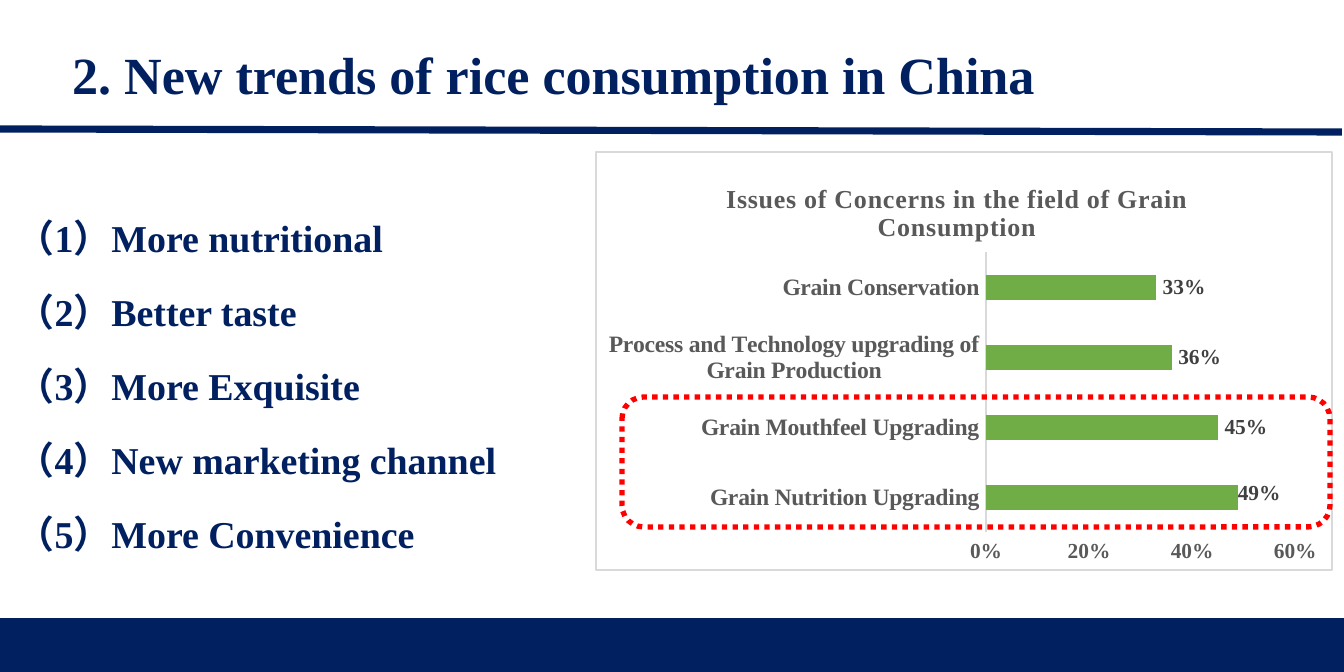
from dataclasses import dataclass

from lxml import etree
from pptx import Presentation
from pptx.chart.data import CategoryChartData
from pptx.dml.color import RGBColor
from pptx.enum.chart import XL_CHART_TYPE, XL_LABEL_POSITION, XL_TICK_MARK
from pptx.enum.dml import MSO_LINE
from pptx.enum.shapes import MSO_CONNECTOR, MSO_SHAPE
from pptx.enum.text import MSO_ANCHOR, PP_ALIGN
from pptx.oxml import parse_xml
from pptx.oxml.ns import nsdecls, qn
from pptx.util import Pt

BAR_CLUSTERED = XL_CHART_TYPE.BAR_CLUSTERED
OUTSIDE_END = XL_LABEL_POSITION.OUTSIDE_END
NO_TICK = XL_TICK_MARK.NONE
STRAIGHT = MSO_CONNECTOR.STRAIGHT
DOTTED = MSO_LINE.ROUND_DOT
RECTANGLE, ROUNDED = MSO_SHAPE.RECTANGLE, MSO_SHAPE.ROUNDED_RECTANGLE
MIDDLE, LEFT = MSO_ANCHOR.MIDDLE, PP_ALIGN.LEFT

EMU_PER_PX = 5354
PAGE_WIDTH, PAGE_HEIGHT = 1344, 672
TITLE_ONLY = 5


@dataclass(frozen=True)
class Theme:
    face: str = "Times New Roman"
    navy: str = "002060"
    white: str = "FFFFFF"
    green: str = "70AD47"
    red: str = "FF0000"
    gray: str = "595959"
    dark: str = "404040"
    pale: str = "D9D9D9"
    title: int = 22
    body: int = 16
    chart_title: int = 11
    category: int = 10
    value: int = 9


THEME = Theme()

TRENDS = ["More nutritional", "Better taste", "More Exquisite",
          "New marketing channel", "More Convenience"]
CHART_TITLE = ["Issues of Concerns in the field of Grain", "Consumption"]
CONCERNS = {
    "Grain Nutrition Upgrading": 0.49,
    "Grain Mouthfeel Upgrading": 0.45,
    "Process and Technology upgrading of Grain Production": 0.36,
    "Grain Conservation": 0.33,
}


def px(*lengths):
    return [length * EMU_PER_PX for length in lengths]


def style_font(font, size, color):
    font.name = THEME.face
    font.size = Pt(size)
    font.bold = True
    font.color.rgb = RGBColor.from_string(color)


def style_line(line, color, width):
    line.color.rgb = RGBColor.from_string(color)
    line.width = Pt(width)


def add_title(page, text, bounds):
    title = page.shapes.title
    title.left, title.top, title.width, title.height = px(*bounds)
    frame = title.text_frame
    frame.text = text
    frame.vertical_anchor = MIDDLE
    para = frame.paragraphs[0]
    para.alignment = LEFT
    para.line_spacing = 0.9
    style_font(para.runs[0].font, THEME.title, THEME.navy)


def add_rule(page, start, end):
    rule = page.shapes.add_connector(STRAIGHT, *px(*start, *end))
    style_line(rule.line, THEME.navy, 3)
    etree.SubElement(rule.line._get_or_add_ln().getparent(), qn("a:effectLst"))


def add_footer(page, bounds):
    footer = page.shapes.add_shape(RECTANGLE, *px(*bounds))
    footer.shadow.inherit = False
    footer.fill.solid()
    footer.fill.fore_color.rgb = RGBColor.from_string(THEME.navy)
    footer.line.fill.background()


def add_numbered_list(page, items, bounds):
    frame = page.shapes.add_textbox(*px(*bounds)).text_frame
    frame.word_wrap = True
    frame.text = "\n".join(f"（{number}）{item}" for number, item in enumerate(items, 1))
    for para in frame.paragraphs:
        para.space_after = Pt(12)
        style_font(para.runs[0].font, THEME.body, THEME.navy)


def add_highlight(page, bounds):
    highlight = page.shapes.add_shape(ROUNDED, *px(*bounds))
    highlight.shadow.inherit = False
    highlight.fill.background()
    style_line(highlight.line, THEME.red, 2.25)
    highlight.line.dash_style = DOTTED


def manual_layout(x, y, **extra):
    """Return a c:layout element; lengths are fractions of the chart."""
    parts = {**extra, "x": x, "y": y}
    order = ["layoutTarget", "xMode", "yMode", "x", "y", "w", "h"]
    items = "".join(f'<c:{key} val="{parts[key]}"/>' for key in order if key in parts)
    return parse_xml(f'<c:layout {nsdecls("c")}><c:manualLayout>{items}'
                     "</c:manualLayout></c:layout>")


def set_layout(parent, layout, before):
    """Replace the layout of parent, placing it ahead of the first child found."""
    for old in parent.findall(qn("c:layout")):
        parent.remove(old)
    for tag in before:
        follower = parent.find(qn(tag))
        if follower is not None:
            follower.addprevious(layout)
            return
    parent.append(layout)


def add_chart_frame(chart):
    frame = parse_xml(
        f'<c:spPr {nsdecls("c", "a")}>'
        f'<a:solidFill><a:srgbClr val="{THEME.white}"/></a:solidFill>'
        f'<a:ln w="{Pt(0.75)}"><a:solidFill><a:srgbClr val="{THEME.pale}"/>'
        "</a:solidFill></a:ln></c:spPr>")
    chart.element.find(qn("c:chart")).addnext(frame)


def style_chart_title(chart):
    frame = chart.chart_title.text_frame
    frame.text = "\n".join(CHART_TITLE)
    for para in frame.paragraphs:
        style_font(para.runs[0].font, THEME.chart_title, THEME.gray)
        para.runs[0].font._element.set("spc", "20")
    title = chart.element.find(".//" + qn("c:title"))
    set_layout(title, manual_layout(0.17, 0.06, xMode="edge", yMode="edge"),
               ["c:overlay"])
    chart.chart_title.include_in_layout = False


def style_axes(chart):
    for axis, size in ((chart.category_axis, THEME.category),
                       (chart.value_axis, THEME.value)):
        axis.major_tick_mark = axis.minor_tick_mark = NO_TICK
        axis.has_major_gridlines = False
        style_font(axis.tick_labels.font, size, THEME.gray)
    style_line(chart.category_axis.format.line, THEME.pale, 0.75)
    values = chart.value_axis
    values.minimum_scale, values.maximum_scale, values.major_unit = 0, 0.6, 0.2
    values.tick_labels.number_format = "0%"
    values.tick_labels.number_format_is_linked = False
    values.format.line.fill.background()


def style_bars(chart):
    plot = chart.plots[0]
    plot.gap_width = 182
    plot.vary_by_categories = False
    bars = plot.series[0]
    bars.format.fill.solid()
    bars.format.fill.fore_color.rgb = RGBColor.from_string(THEME.green)
    labels = bars.data_labels
    labels.show_value = True
    labels.number_format = "0%"
    labels.number_format_is_linked = False
    labels.position = OUTSIDE_END
    style_font(labels.font, THEME.value, THEME.dark)
    nudged = bars.points[0].data_label
    style_font(nudged.font, THEME.value, THEME.dark)
    nudged.position = OUTSIDE_END
    set_layout(chart.element.find(".//" + qn("c:dLbl")), manual_layout(-0.01, -0.01),
               ["c:tx", "c:numFmt", "c:spPr", "c:txPr"])


def add_concerns_chart(page, bounds):
    chart_data = CategoryChartData(number_format="0%")
    chart_data.categories = list(CONCERNS)
    chart_data.add_series("Series 1", list(CONCERNS.values()))
    chart = page.shapes.add_chart(BAR_CLUSTERED, *px(*bounds), chart_data).chart
    chart.has_legend = False
    style_font(chart.font, THEME.value, THEME.gray)
    add_chart_frame(chart)
    style_chart_title(chart)
    style_axes(chart)
    style_bars(chart)
    plot_layout = manual_layout(0.53, 0.24, w=0.42, h=0.67, layoutTarget="inner",
                                xMode="edge", yMode="edge")
    set_layout(chart.element.find(".//" + qn("c:plotArea")), plot_layout, ["c:barChart"])


def main():
    deck = Presentation()
    deck.slide_width, deck.slide_height = px(PAGE_WIDTH, PAGE_HEIGHT)
    page = deck.slides.add_slide(deck.slide_layouts[TITLE_ONLY])
    add_footer(page, (0, 618, PAGE_WIDTH, 54))
    add_rule(page, (0, 129), (1342, 132))
    add_title(page, "2. New trends of rice consumption in China", (55, 26, 1270, 104))
    add_numbered_list(page, TRENDS, (0, 206, 590, 368))
    add_concerns_chart(page, (595, 151, 738, 420))
    add_highlight(page, (622, 397, 708, 130))
    deck.save("out.pptx")


if __name__ == "__main__":
    main()
